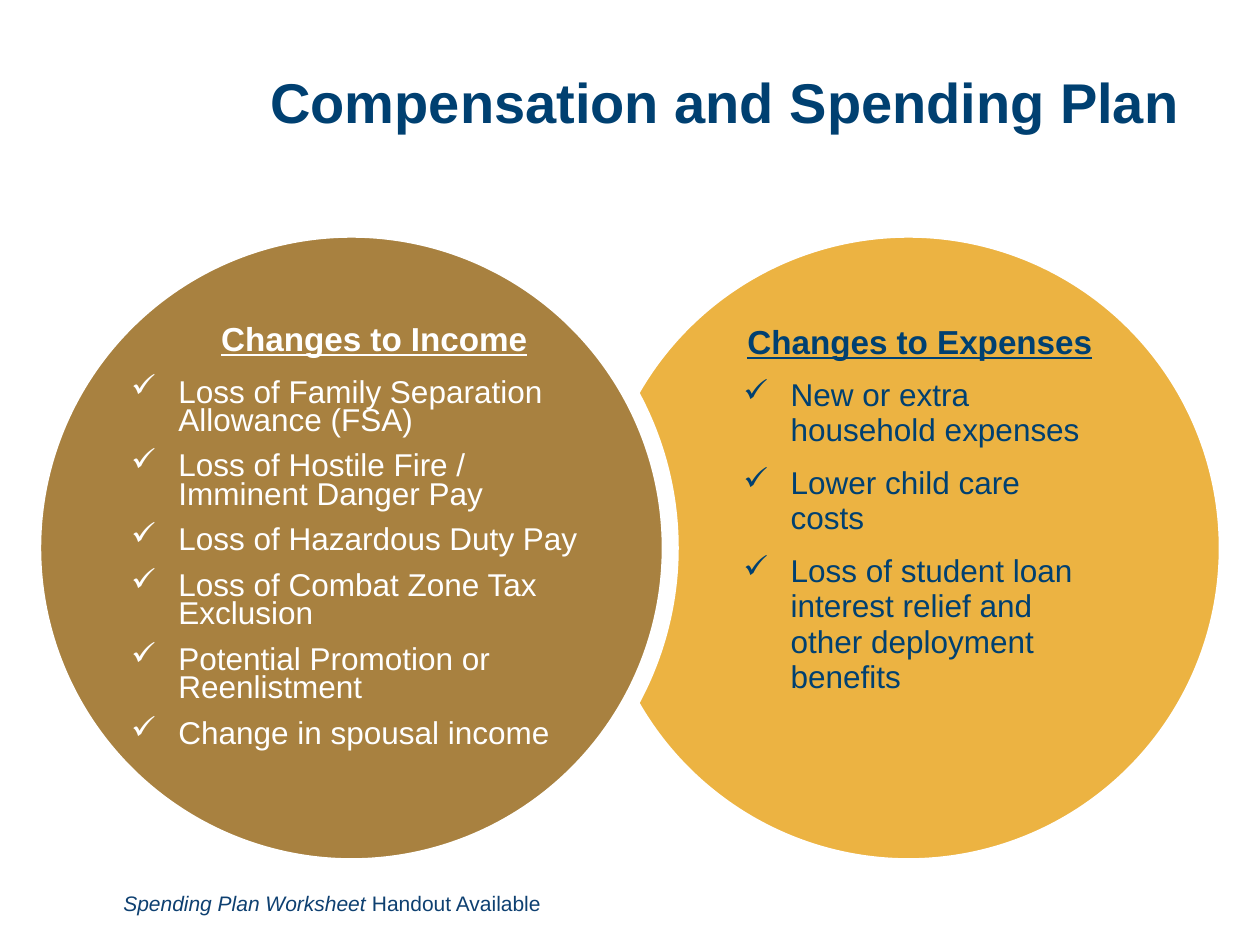
from pptx import Presentation
from pptx.dml.color import RGBColor
from pptx.enum.shapes import MSO_SHAPE
from pptx.enum.text import MSO_ANCHOR, PP_ALIGN
from pptx.oxml.ns import qn
from pptx.util import Pt
from lxml import etree

ELLIPSE = MSO_SHAPE.OVAL
MIDDLE = MSO_ANCHOR.MIDDLE
TOP = MSO_ANCHOR.TOP
CENTER = PP_ALIGN.CENTER
LEFT = PP_ALIGN.LEFT
PLAIN_TABLE = "{2D5ABB26-0587-4C30-8999-92F81FD0307C}"

NAVY = "004071"
FOOTER_NAVY = "0E4071"
WHITE = "FFFFFF"
GOLD = "ECB342"
BRONZE = "A88140"


def color(hex_code):
    return RGBColor.from_string(hex_code)


def apply(target, values):
    for name, value in values.items():
        setattr(target, name, value)


class SlideBuilder:
    font_name = "Arial"
    bullet = "✓"
    indent = Pt(27)
    gap = Pt(10)
    inset_x = Pt(7.2)
    inset_y = Pt(3.6)

    def __init__(self, slide):
        self.slide = slide

    def style_font(self, font, size, hex_code, **extra):
        apply(font, {"name": self.font_name, "size": Pt(size), **extra})
        font.color.rgb = color(hex_code)

    def text(self, box, runs, size, hex_code, anchor=TOP, bold=False, **layout):
        frame = self.slide.shapes.add_textbox(*map(Pt, box)).text_frame
        apply(frame, {"word_wrap": True, "vertical_anchor": anchor})
        paragraph = frame.paragraphs[0]
        apply(paragraph, layout)
        for wording, italic in runs:
            run = paragraph.add_run()
            run.text = wording
            self.style_font(run.font, size, hex_code, bold=bold, italic=italic)

    def circle(self, left, top, diameter, fill):
        shape = self.slide.shapes.add_shape(
            ELLIPSE, Pt(left), Pt(top), Pt(diameter), Pt(diameter))
        shape.shadow.inherit = False
        shape.fill.solid()
        shape.fill.fore_color.rgb = color(fill)
        shape.line.color.rgb = color(WHITE)
        shape.line.width = Pt(9.75)

    def add_check(self, paragraph):
        properties = paragraph._p.get_or_add_pPr()
        properties.set("marL", str(self.indent))
        properties.set("indent", str(-self.indent))
        etree.SubElement(properties, qn("a:buChar")).set("char", self.bullet)

    def checklist(self, left, top, width, heights, heading, items, hex_code,
                  heading_spacing, item_spacing):
        frame = self.slide.shapes.add_table(
            2, 1, Pt(left), Pt(top), Pt(width), Pt(sum(heights)))
        table = frame.table
        apply(table, {"first_row": False, "horz_banding": False})
        next(frame.element.iter(qn("a:tableStyleId"))).text = PLAIN_TABLE
        for row, height in zip(table.rows, heights):
            row.height = Pt(height)
        for cell in table.iter_cells():
            cell.fill.background()
            apply(cell, {"margin_left": self.inset_x, "margin_right": self.inset_x,
                         "margin_top": self.inset_y, "margin_bottom": self.inset_y})

        title = table.cell(0, 0).text_frame.paragraphs[0]
        title.text = heading
        apply(title, {"alignment": CENTER, "line_spacing": heading_spacing})
        self.style_font(title.runs[0].font, 19, hex_code, bold=True, underline=True)

        body = table.cell(1, 0).text_frame
        for index, item in enumerate(items):
            paragraph = body.add_paragraph() if index else body.paragraphs[0]
            self.add_check(paragraph)
            paragraph.text = item
            apply(paragraph, {"alignment": LEFT, "line_spacing": item_spacing,
                              "space_before": self.gap if index else Pt(0)})
            for run in paragraph.runs:
                self.style_font(run.font, 18, hex_code, bold=False)


def main():
    deck = Presentation()
    apply(deck, {"slide_width": Pt(720), "slide_height": Pt(540)})
    builder = SlideBuilder(deck.slides.add_slide(deck.slide_layouts[6]))

    builder.text((146.9, 7.9, 535, 104.4),
                 [("Compensation and Spending Plan", False)], 32, NAVY,
                 anchor=MIDDLE, bold=True, alignment=CENTER, line_spacing=0.9)

    for left, fill in ((337, GOLD), (18.7, BRONZE)):
        builder.circle(left, 131, 364.3, fill)

    expenses = ["New or extra household expenses",
                "Lower child care costs",
                "Loss of student loan interest relief and other deployment benefits"]
    income = ["Loss of Family Separation Allowance (FSA)",
              "Loss of Hostile Fire /\vImminent Danger Pay",
              "Loss of Hazardous Duty Pay",
              "Loss of Combat Zone Tax Exclusion",
              "Potential Promotion or Reenlistment",
              "Change in spousal income"]
    builder.checklist(417.6, 183.6, 216, (28.8, 194.4), "Changes to Expenses",
                      expenses, NAVY, 0.9, 1.0)
    builder.checklist(67.7, 183.6, 292.3, (30.2, 190.8), "Changes to Income",
                      income, WHITE, 0.8, 0.8)

    builder.text((63.4, 505.4, 545, 21.6),
                 [("Spending Plan Worksheet ", True), ("Handout Available", False)],
                 12, FOOTER_NAVY)
    deck.save("out.pptx")


if __name__ == "__main__":
    main()
